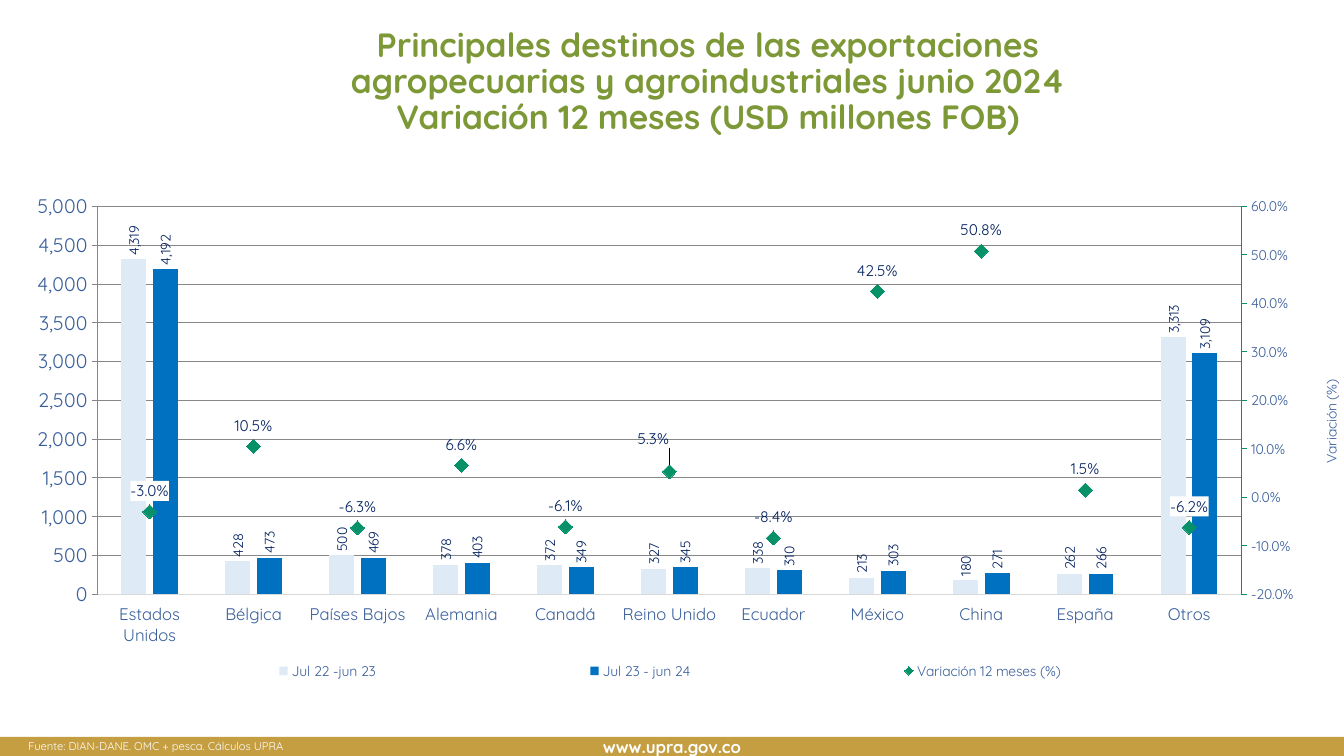
from copy import deepcopy

from pptx import Presentation
from pptx import oxml
from pptx.chart import axis as axes, data
from pptx.dml.color import RGBColor
from pptx.enum import chart as kinds, shapes, text
from pptx.oxml import ns
from pptx.util import Inches, Pt

FACE = "Quicksand"
WHITE = RGBColor(255, 255, 255)
GOLD = RGBColor(0xC5, 0x9E, 0x41)
OLIVE = RGBColor(0x7D, 0x98, 0x37)
SLATE = RGBColor(0x39, 0x5F, 0x9B)
NAVY = RGBColor(0x00, 0x20, 0x60)
PALE = RGBColor(0xDE, 0xEB, 0xF7)
BLUE = RGBColor(0x00, 0x70, 0xC0)
GREEN = RGBColor(0x06, 0x91, 0x69)
GREY = RGBColor(0xD9, 0xD9, 0xD9)

LANDS = ["Estados Unidos", "Bélgica", "Países Bajos", "Alemania", "Canadá",
         "Reino Unido", "Ecuador", "México", "China", "España", "Otros"]
PRIOR = [4319, 428, 500, 378, 372, 327, 338, 213, 180, 262, 3313]
LAST = [4192, 473, 469, 403, 349, 345, 310, 303, 271, 266, 3109]
SHIFT = [-0.03, 0.105, -0.063, 0.066, -0.061, 0.053,
         -0.084, 0.425, 0.508, 0.015, -0.062]


def style(font, size, color, bold=False):
    """Set the face, size, colour and weight of a font."""
    font.name, font.size, font.bold = FACE, Pt(size), bold
    font.color.rgb = color


def write(shape, words, size, color, align, bold=False):
    """Fill a shape with wrapped text in one style."""
    frame = shape.text_frame
    frame.word_wrap = True
    frame.text = words
    for para in frame.paragraphs:
        para.alignment = align
        for run in para.runs:
            style(run.font, size, color, bold)
    return frame


def node(tag, body="", **attrs):
    """Build a chart XML element."""
    pairs = "".join(f' {key}="{val}"' for key, val in attrs.items())
    return oxml.parse_xml(
        f'<c:{tag} {ns.nsdecls("c", "a")}{pairs}>{body}</c:{tag}>')


def place(part, index, **vals):
    """Give a chart part a manual layout."""
    for old in part.findall(ns.qn("c:layout")):
        part.remove(old)
    body = "".join(f'<c:{key} val="{val}"/>' for key, val in vals.items())
    part.insert(index, node("layout", f"<c:manualLayout>{body}</c:manualLayout>"))


def pin(part, index, x, y, **size):
    """Place a chart part by its top left corner."""
    place(part, index, xMode="edge", yMode="edge", x=x, y=y, **size)


def scale(axis, name, low, high, step, form, tick, color, x, y):
    """Format a value axis and its turned title."""
    axis.has_major_gridlines = False
    axis.minimum_scale, axis.maximum_scale, axis.major_unit = low, high, step
    axis.major_tick_mark = tick
    axis.tick_labels.number_format = form
    axis.tick_labels.number_format_is_linked = False
    style(axis.tick_labels.font, 10, SLATE)
    axis.format.line.color.rgb = color
    axis.format.line.width = Pt(0.75)
    frame = axis.axis_title.text_frame
    frame.text = name
    style(frame.paragraphs[0].runs[0].font, 10, SLATE)
    title = axis.axis_title._element
    turn(title)
    pin(title, 1, x, y)


def turn(part):
    """Turn the text of a chart part upwards."""
    body = part.find(".//" + ns.qn("a:bodyPr"))
    body.set("rot", "-5400000")
    body.set("vert", "horz")


def label(series, size, form, side):
    """Show the values of a series."""
    marks = series.data_labels
    marks.show_value = True
    marks.number_format, marks.number_format_is_linked = form, False
    marks.position = side
    style(marks.font, size, NAVY)
    return marks


def split(chart):
    """Move the third series to a line plot on a second axis."""
    area = chart._chartSpace.chart.plotArea
    bars = area.find(ns.qn("c:barChart"))
    cat, val = area.find(ns.qn("c:catAx")), area.find(ns.qn("c:valAx"))
    row = bars.findall(ns.qn("c:ser"))[2]
    for flag in row.findall(ns.qn("c:invertIfNegative")):
        row.remove(flag)
    line = node("lineChart", '<c:grouping val="standard"/><c:varyColors val="0"/>'
                '<c:marker val="1"/><c:axId val="501"/><c:axId val="502"/>')
    line.insert(2, row)
    bars.addnext(line)
    right, base = deepcopy(val), deepcopy(cat)
    val.addnext(right)
    right.addnext(base)
    for axis, own, cross in ((base, "501", "502"), (right, "502", "501")):
        axis.find(ns.qn("c:axId")).set("val", own)
        axis.find(ns.qn("c:crossAx")).set("val", cross)
    base.find(ns.qn("c:delete")).set("val", "1")
    right.find(ns.qn("c:axPos")).set("val", "r")
    right.find(ns.qn("c:crosses")).set("val", "max")
    pin(area, 0, 0.073, 0.065, w=0.855, h=0.737)
    target = area.find(ns.qn("c:layout"))[0]
    target.insert(0, node("layoutTarget", val="inner"))
    return axes.ValueAxis(right)


def spot(series, index):
    """Give one point its own label."""
    tag = series.points[index].data_label
    style(tag.font, 11, NAVY)
    tag.position = kinds.XL_LABEL_POSITION.ABOVE
    mark = next(item for item in series._element.iter(ns.qn("c:dLbl"))
                if item[0].get("val") == str(index))
    mark.find(ns.qn("c:txPr")).addprevious(
        node("numFmt", formatCode="0.0%", sourceLinked="0"))
    return mark


def trend(series):
    """Draw the change as diamonds without a line."""
    series.smooth = False
    series.format.line.fill.background()
    sign = series.marker
    sign.style, sign.size = kinds.XL_MARKER_STYLE.DIAMOND, 10
    sign.format.fill.solid()
    sign.format.fill.fore_color.rgb = GREEN
    sign.format.line.color.rgb = GREEN
    label(series, 11, "0.0%", kinds.XL_LABEL_POSITION.ABOVE)
    for index in (0, len(LANDS) - 1):
        spot(series, index).find(ns.qn("c:txPr")).addprevious(node(
            "spPr", f'<a:solidFill><a:srgbClr val="{WHITE}"/></a:solidFill>'))
    place(spot(series, LANDS.index("Reino Unido")), 1, x=-0.012, y=-0.023)


def graph(slide):
    """Add the chart of exports and their change."""
    sheet = data.CategoryChartData()
    sheet.categories = LANDS
    sheet.add_series("Jul 22 -jun 23", PRIOR, "#,##0")
    sheet.add_series("Jul 23 - jun 24", LAST, "#,##0")
    sheet.add_series("Variación 12 meses (%)", SHIFT, "0.0%")
    chart = slide.shapes.add_chart(
        kinds.XL_CHART_TYPE.COLUMN_CLUSTERED, Inches(0), Inches(1.71),
        Inches(13.33), Inches(5.22), sheet).chart
    style(chart.font, 14, SLATE)
    chart.has_title = False
    right = split(chart)
    ticks = kinds.XL_TICK_MARK
    scale(chart.value_axis, "USD millones FOB", 0, 5000, 500, "#,##0",
          ticks.INSIDE, SLATE, 0.019, 0.354)
    scale(right, "Variación (%)", -0.2, 0.6, 0.1, "0.0%",
          ticks.OUTSIDE, GREEN, 0.986, 0.388)
    base = chart.category_axis
    base.major_tick_mark = ticks.NONE
    base.tick_label_position = kinds.XL_TICK_LABEL_POSITION.LOW
    base.format.line.color.rgb = GREY
    base.format.line.width = Pt(0.75)
    style(base.tick_labels.font, 12, SLATE)
    bars, line = chart.plots
    bars.gap_width, bars.overlap, bars.vary_by_categories = 191, -26, False
    for series, color in zip(bars.series, (PALE, BLUE)):
        series.format.fill.solid()
        series.format.fill.fore_color.rgb = color
        marks = label(series, 10, "#,##0", kinds.XL_LABEL_POSITION.OUTSIDE_END)
        turn(marks._element)
    trend(line.series[0])
    chart.has_legend = True
    key = chart.legend
    key.position = kinds.XL_LEGEND_POSITION.BOTTOM
    key.include_in_layout = False
    style(key.font, 10, SLATE)
    pin(key._element, 1, 0.052, 0.92, w=0.898, h=0.055)


def main():
    """Build and save the slide."""
    deck = Presentation()
    deck.slide_width, deck.slide_height = Inches(13.33), Inches(7.5)
    slide = deck.slides.add_slide(deck.slide_layouts[6])
    band = slide.shapes.add_shape(
        shapes.MSO_SHAPE.RECTANGLE, Inches(0), Inches(7.31),
        Inches(13.33), Inches(0.19))
    band.shadow.inherit = False
    band.fill.solid()
    band.fill.fore_color.rgb = GOLD
    band.line.fill.background()
    frame = write(band, "www.upra.gov.co", 12, WHITE, text.PP_ALIGN.CENTER, True)
    frame.vertical_anchor = text.MSO_ANCHOR.MIDDLE
    title = slide.shapes.add_textbox(
        Inches(2.44), Inches(0.23), Inches(9.16), Inches(1.07))
    frame = write(title, "Principales destinos de las exportaciones agropecuarias "
                  "y agroindustriales junio 2024\vVariación 12 meses (USD millones "
                  "FOB)", 24, OLIVE, text.PP_ALIGN.CENTER, True)
    frame.paragraphs[0].line_spacing = 0.9
    note = slide.shapes.add_textbox(
        Inches(0.18), Inches(7.29), Inches(12.91), Inches(0.24))
    write(note, "Fuente: DIAN-DANE. OMC + pesca. Cálculos UPRA", 8, WHITE,
          text.PP_ALIGN.JUSTIFY)
    graph(slide)
    deck.save("out.pptx")


if __name__ == "__main__":
    main()
